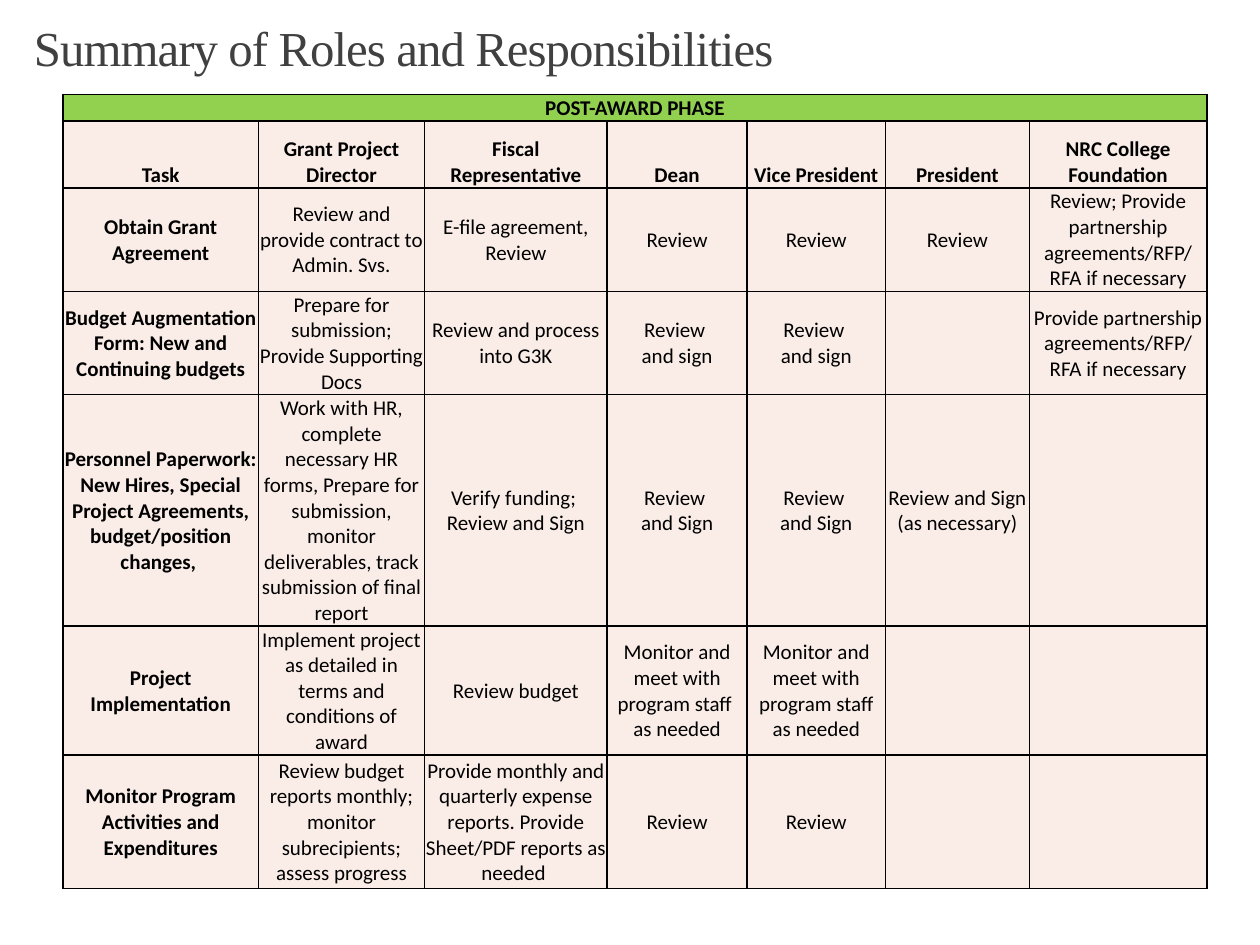
"""Build the post-award roles and responsibilities slide."""
from dataclasses import dataclass

from lxml.etree import SubElement
from pptx import Presentation
from pptx.dml.color import RGBColor
from pptx.enum.text import MSO_ANCHOR, MSO_AUTO_SIZE, PP_ALIGN
from pptx.oxml.ns import qn
from pptx.util import Cm, Pt

HUES = {"head": "92D050", "body": "FAEDE7", "ink": "000000", "title": "404040"}
COLS = (3.94, 3.35, 3.68, 2.82, 2.79, 2.9, 3.58)
SIGN = "Review \nand Sign"


@dataclass
class Row:
    high: float
    texts: tuple
    head: bool = False
    hue: str = "body"


ROWS = (
    Row(0.51, ("POST-AWARD PHASE",), head=True, hue="head"),
    Row(1.35, ("Task", "Grant Project Director", "Fiscal Representative", "Dean",
               "Vice President", "President", "NRC College\nFoundation"), head=True),
    Row(1.96, ("Obtain Grant Agreement",
               "Review and provide contract to Admin. Svs.",
               "E-file agreement, Review", "Review", "Review", "Review",
               "Review; Provide partnership agreements/RFP/\nRFA if necessary")),
    Row(1.96, ("Budget Augmentation Form: New and Continuing budgets",
               "Prepare for submission; Provide Supporting Docs",
               "Review and process into G3K", "Review \nand sign", "Review \nand sign", "",
               "Provide partnership agreements/RFP/\nRFA if necessary")),
    Row(4.37, ("Personnel Paperwork: New Hires, Special Project Agreements, "
               "budget/position changes, ",
               "Work with HR, complete necessary HR forms, Prepare for submission, "
               "monitor deliverables, track submission of final report",
               "Verify funding; \nReview and Sign", SIGN, SIGN,
               "Review and Sign (as necessary)", "")),
    Row(2.44, ("Project Implementation",
               "Implement project as detailed in terms and conditions of award",
               "Review budget", "Monitor and meet with program staff \nas needed",
               "Monitor and meet with program staff as needed", "", "")),
    Row(2.69, ("Monitor Program Activities and Expenditures",
               "Review budget reports monthly; monitor subrecipients; assess progress",
               "Provide monthly and quarterly expense reports. "
               "Provide Sheet/PDF reports as needed ",
               "Review", "Review", "", "")),
)


def write(frame, text: str, *, size: float = 12, font: str = "Calibri", hue: str = "ink",
          bold: bool = False, align=PP_ALIGN.CENTER, track: int = 0) -> None:
    """Fill a text frame with formatted paragraphs."""
    frame.text = text
    frame.word_wrap = True
    for para in frame.paragraphs:
        para.alignment = align
        para.line_spacing = 1.0
        para.font.size = Pt(size)
        for run in para.runs:
            run.font.size = Pt(size)
            run.font.name = font
            run.font.bold = bold
            run.font.color.rgb = RGBColor.from_string(HUES[hue])
            if track:
                run.font._element.set("spc", str(track))


def edge(cell) -> None:
    """Draw a thin line on each side of a cell."""
    props = cell._tc.get_or_add_tcPr()
    for side in ("lnL", "lnR", "lnT", "lnB"):
        line = SubElement(props, qn(f"a:{side}"), w=str(Pt(1)))
        SubElement(SubElement(line, qn("a:solidFill")), qn("a:srgbClr"), val=HUES["ink"])


def paint(cell, row: Row) -> None:
    """Set the margins, anchor, border and fill of a cell."""
    cell.margin_left = cell.margin_right = cell.margin_top = Cm(0.02)
    cell.margin_bottom = Cm(0)
    cell.vertical_anchor = MSO_ANCHOR.BOTTOM if row.head else MSO_ANCHOR.MIDDLE
    edge(cell)
    cell.fill.solid()
    cell.fill.fore_color.rgb = RGBColor.from_string(HUES[row.hue])


def add_title(slide) -> None:
    """Place and format the slide title."""
    title = slide.shapes.title
    title.left, title.top, title.width, title.height = Cm(0.43), Cm(0.36), Cm(23.93), Cm(1.2)
    frame = title.text_frame
    frame.auto_size = MSO_AUTO_SIZE.NONE
    frame.vertical_anchor = MSO_ANCHOR.TOP
    frame.margin_top = frame.margin_bottom = Cm(0)
    write(frame, "Summary of Roles and Responsibilities", size=27.9,
          font="Times New Roman", hue="title", align=PP_ALIGN.LEFT, track=-50)


def add_grid(slide) -> None:
    """Add the table of tasks and roles."""
    grid = slide.shapes.add_table(len(ROWS), len(COLS), Cm(1.27), Cm(1.9), Cm(sum(COLS)),
                                  Cm(sum(row.high for row in ROWS))).table
    grid.first_row = grid.horz_banding = False
    for col, wide in zip(grid.columns, COLS):
        col.width = Cm(wide)
    for r, row in enumerate(ROWS):
        grid.rows[r].height = Cm(row.high)
        for c in range(len(COLS)):
            paint(grid.cell(r, c), row)
        for c, text in enumerate(row.texts):
            write(grid.cell(r, c).text_frame, text, bold=row.head or c == 0)
    grid.cell(0, 0).merge(grid.cell(0, len(COLS) - 1))


def main() -> None:
    """Build and save the slide."""
    deck = Presentation()
    deck.slide_width, deck.slide_height = Cm(25.4), Cm(19.05)
    slide = deck.slides.add_slide(deck.slide_layouts[5])
    add_title(slide)
    add_grid(slide)
    deck.save("out.pptx")


if __name__ == "__main__":
    main()
